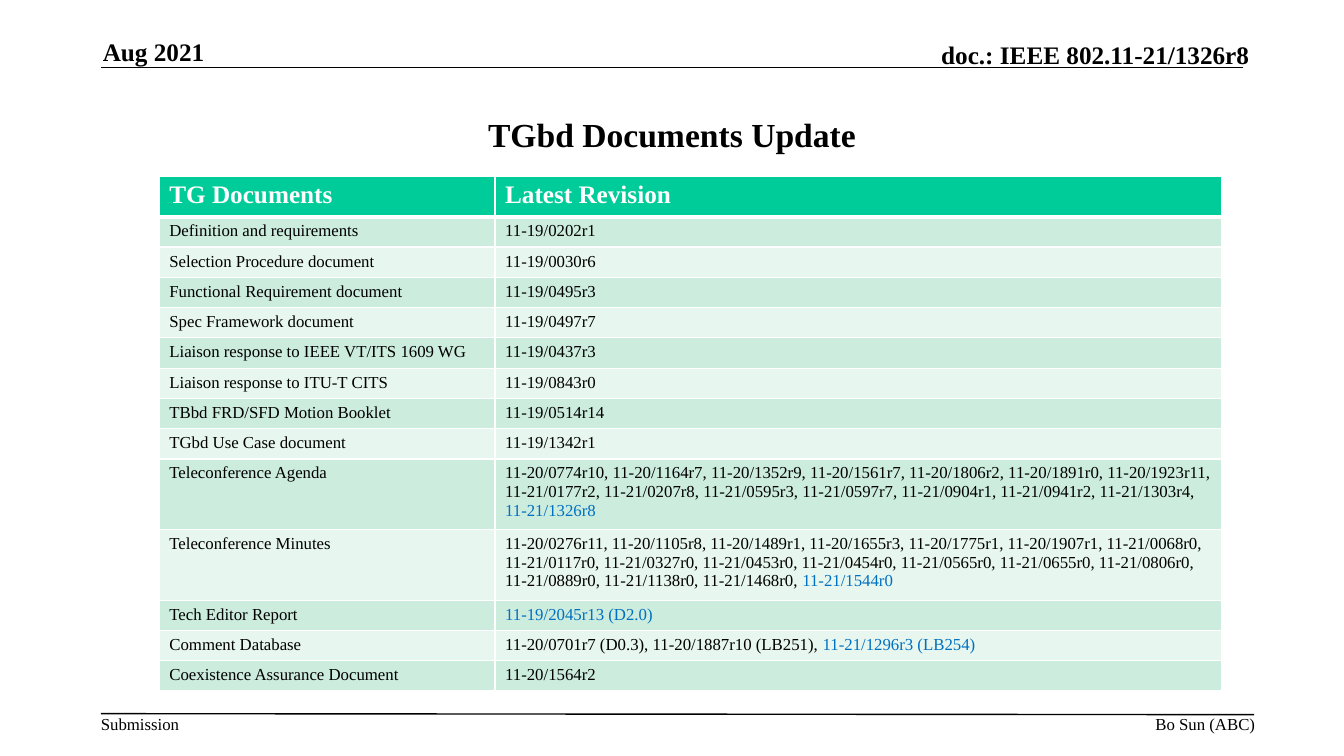
from dataclasses import dataclass

from lxml.etree import SubElement
from pptx import Presentation
from pptx.dml.color import RGBColor
from pptx.enum.shapes import MSO_CONNECTOR
from pptx.enum.text import MSO_ANCHOR, PP_ALIGN
from pptx.oxml import parse_xml
from pptx.oxml.ns import nsdecls, qn
from pptx.util import Inches, Pt


@dataclass(frozen=True)
class Theme:
    font: str = "Times New Roman"
    title_size: int = 24
    heading_size: int = 18
    body_size: int = 12
    ink: str = "000000"
    paper: str = "FFFFFF"
    updated: str = "0070C0"
    header_fill: str = "00CC99"
    bands: tuple = ("CCECDE", "E7F6EF")
    thin: int = 1
    thick: int = 3


THEME = Theme()

# Document, settled revisions, newly updated revision
DOCUMENTS = [
    ("Definition and requirements", "11-19/0202r1", ""),
    ("Selection Procedure document", "11-19/0030r6", ""),
    ("Functional Requirement document", "11-19/0495r3", ""),
    ("Spec Framework document", "11-19/0497r7", ""),
    ("Liaison response to IEEE VT/ITS 1609 WG", "11-19/0437r3", ""),
    ("Liaison response to ITU-T CITS", "11-19/0843r0", ""),
    ("TBbd FRD/SFD Motion Booklet", "11-19/0514r14", ""),
    ("TGbd Use Case document", "11-19/1342r1", ""),
    ("Teleconference Agenda",
     "11-20/0774r10, 11-20/1164r7, 11-20/1352r9, 11-20/1561r7, 11-20/1806r2, "
     "11-20/1891r0, 11-20/1923r11, 11-21/0177r2, 11-21/0207r8, 11-21/0595r3, "
     "11-21/0597r7, 11-21/0904r1, 11-21/0941r2, 11-21/1303r4, ",
     "11-21/1326r8"),
    ("Teleconference Minutes",
     "11-20/0276r11, 11-20/1105r8, 11-20/1489r1, 11-20/1655r3, 11-20/1775r1, "
     "11-20/1907r1, 11-21/0068r0, 11-21/0117r0, 11-21/0327r0, 11-21/0453r0, "
     "11-21/0454r0, 11-21/0565r0, 11-21/0655r0, 11-21/0806r0, 11-21/0889r0, "
     "11-21/1138r0, 11-21/1468r0, ",
     "11-21/1544r0"),
    ("Tech Editor Report", "", "11-19/2045r13 (D2.0)"),
    ("Comment Database", "11-20/0701r7 (D0.3), 11-20/1887r10 (LB251), ",
     "11-21/1296r3 (LB254)"),
    ("Coexistence Assurance Document", "11-20/1564r2", ""),
]


def style(para, size, color=THEME.ink, bold=False):
    para.font.name = THEME.font
    para.font.size = Pt(size)
    para.font.bold = bold
    para.font.color.rgb = RGBColor.from_string(color)


def add_text(page, box, text, size, bold=False, align=PP_ALIGN.LEFT, anchor=MSO_ANCHOR.TOP):
    frame = page.shapes.add_textbox(*map(Inches, box)).text_frame
    frame.word_wrap = True
    frame.vertical_anchor = anchor
    frame.margin_left = frame.margin_right = frame.margin_top = frame.margin_bottom = 0
    para = frame.paragraphs[0]
    para.text = text
    para.alignment = align
    style(para, size, bold=bold)


def add_rule(page, left, top, right, bottom):
    rule = page.shapes.add_connector(MSO_CONNECTOR.STRAIGHT, *map(Inches, (left, top, right, bottom)))
    rule.line.color.rgb = RGBColor.from_string(THEME.ink)
    rule.line.width = Pt(THEME.thin)
    SubElement(rule._element.spPr, qn("a:effectLst"))


def add_header(page, box):
    left, top, width, height = box
    add_rule(page, left, top + height, left + width, top + height)
    add_text(page, (left + 0.02, top, 2.73, 0.3), "Aug 2021",
             THEME.heading_size, bold=True, anchor=MSO_ANCHOR.BOTTOM)
    add_text(page, (left + width - 5.04, top + 0.03, 5.1, 0.3), "doc.: IEEE 802.11-21/1326r8",
             THEME.heading_size, bold=True, align=PP_ALIGN.RIGHT, anchor=MSO_ANCHOR.BOTTOM)


def add_footer(page, box):
    left, top, width, height = box
    add_rule(page, left, top, left + width, top + 0.01)
    add_text(page, (left, top, 0.9, height), "Submission", THEME.body_size)
    add_text(page, (left + width - 4.63, top, 4.64, height), "Bo Sun (ABC)",
             THEME.body_size, align=PP_ALIGN.RIGHT)


def paint_cell(cell, fill, top=THEME.thin, bottom=THEME.thin):
    """Fill the cell and give it white borders, with widths in points."""
    cell.fill.solid()
    cell.fill.fore_color.rgb = RGBColor.from_string(fill)
    properties = cell._tc.get_or_add_tcPr()
    widths = {"lnL": THEME.thin, "lnR": THEME.thin, "lnT": top, "lnB": bottom}
    for position, (side, width) in enumerate(widths.items()):
        properties.insert(position, parse_xml(
            f'<a:{side} {nsdecls("a")} w="{Pt(width)}"><a:solidFill>'
            f'<a:srgbClr val="{THEME.paper}"/></a:solidFill></a:{side}>'))


def add_documents_table(page, box):
    left, top, width, height = map(Inches, box)
    table = page.shapes.add_table(len(DOCUMENTS) + 1, 2, left, top, width, height).table
    table.columns[0].width = Inches(3.33)
    table.columns[1].width = width - Inches(3.33)

    table.rows[0].height = Inches(0.37)
    for cell, heading in zip(table.rows[0].cells, ("TG Documents", "Latest Revision")):
        paint_cell(cell, THEME.header_fill, bottom=THEME.thick)
        cell.text = heading
        style(cell.text_frame.paragraphs[0], THEME.heading_size, THEME.paper, bold=True)

    for index, (name, settled, updated) in enumerate(DOCUMENTS):
        row = table.rows[index + 1]
        row.height = Inches(0.65 if len(settled) > 100 else 0.28)
        for cell, spans in zip(row.cells, ((name, ""), (settled, updated))):
            paint_cell(cell, THEME.bands[index % 2], top=THEME.thin if index else THEME.thick)
            para = cell.text_frame.paragraphs[0]
            style(para, THEME.body_size)
            for text, color in zip(spans, (THEME.ink, THEME.updated)):
                if text:
                    span = para.add_run()
                    span.text = text
                    span.font.color.rgb = RGBColor.from_string(color)


def main():
    deck = Presentation()
    deck.slide_width, deck.slide_height = Inches(13.33), Inches(7.5)
    page = deck.slides.add_slide(deck.slide_layouts[6])
    add_header(page, (1, 0.36, 11.33, 0.31))
    add_text(page, (1, 0.75, 11.33, 1.16), "TGbd Documents Update", THEME.title_size,
             bold=True, align=PP_ALIGN.CENTER, anchor=MSO_ANCHOR.MIDDLE)
    add_documents_table(page, (1.58, 1.75, 10.54, 4.75))
    add_footer(page, (1, 7.08, 11.44, 0.2))
    deck.save("out.pptx")


if __name__ == "__main__":
    main()
